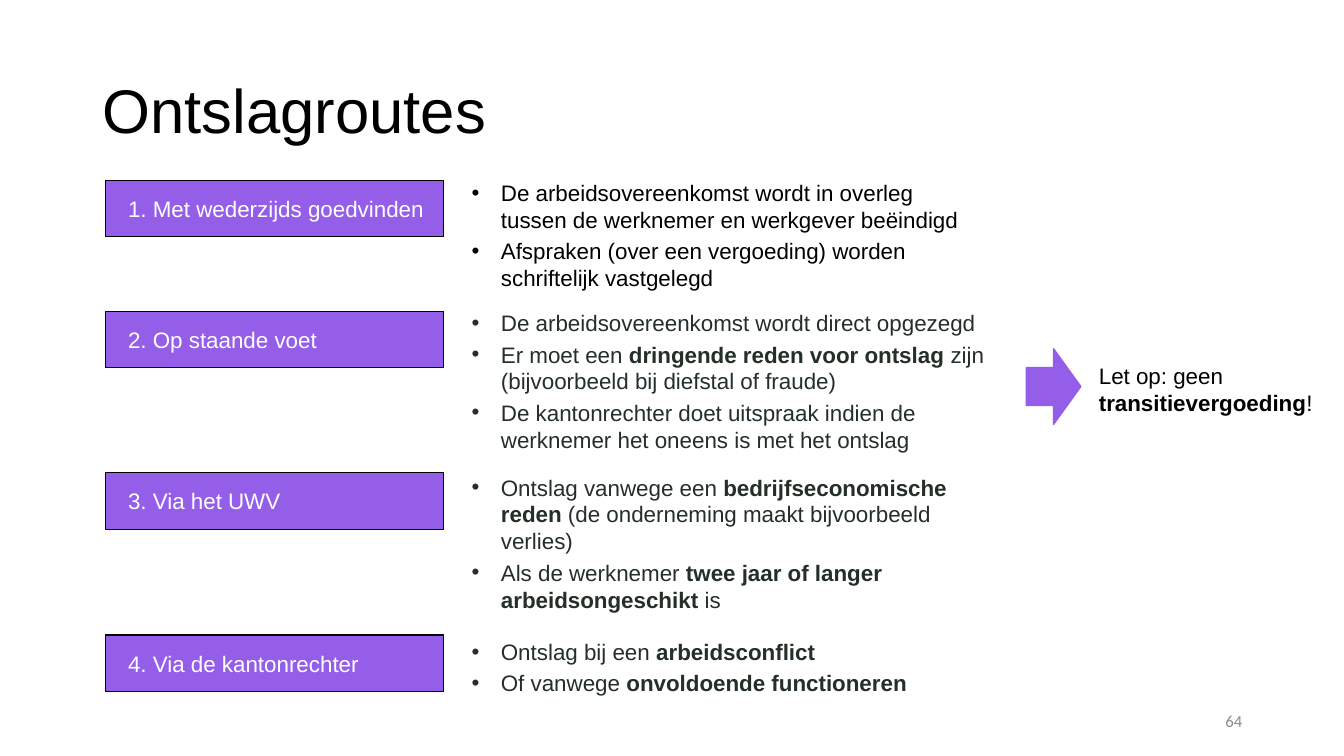
from lxml.etree import SubElement
from pptx import Presentation
from pptx.dml.color import RGBColor
from pptx.enum.shapes import MSO_SHAPE
from pptx.enum.text import MSO_ANCHOR, PP_ALIGN
from pptx.oxml.ns import qn
from pptx.util import Inches, Pt

TITLE = "Ontslagroutes"
PAGE = "64"
# Each paragraph is split at "*": every second piece is bold.
# Route: label, label top, text top, text height, text width, colour, bullets
ROUTES = [
    ("1. Met wederzijds goedvinden", 1.79, 1.73, 1.06, 5.17, "black", [
        "De arbeidsovereenkomst wordt in overleg tussen de werknemer en werkgever beëindigd",
        "Afspraken (over een vergoeding) worden schriftelijk vastgelegd"]),
    ("2. Op staande voet", 3.09, 3.02, 1.63, 5.35, "ink", [
        "De arbeidsovereenkomst wordt direct opgezegd",
        "Er moet een *dringende reden voor ontslag *zijn (bijvoorbeeld bij diefstal of fraude)",
        "De kantonrechter doet uitspraak indien de werknemer het oneens is met het ontslag"]),
    ("3. Via het UWV", 4.69, 4.65, 1.25, 5.17, "ink", [
        "Ontslag vanwege een *bedrijfseconomische reden *"
        "(de onderneming maakt bijvoorbeeld verlies)",
        "Als de werknemer *twee jaar of langer arbeidsongeschikt* is"]),
    ("4. Via de kantonrechter", 6.3, 6.28, 0.8, 5.17, "ink", [
        "Ontslag bij een *arbeidsconflict",
        "Of vanwege *onvoldoende functioneren"]),
]
NOTE = "Let op: geen *transitievergoeding*!"

THEME = {
    "purple": RGBColor.from_string("945EE8"),
    "black": RGBColor.from_string("000000"),
    "ink": RGBColor.from_string("242F27"),
    "white": RGBColor.from_string("FFFFFF"),
    "grey": RGBColor.from_string("8C8C8C"),
    "title": Pt(44), "body": Pt(16), "page": Pt(12),
}
LABEL_X, LABEL_W, LABEL_H = 1.05, 3.35, 0.56
TEXT_X = 4.58
INDENT = Inches(0.29)


def set_all(target, values):
    for name, value in values.items():
        setattr(target, name, value)


def add_bullet(p):
    pPr = p._p.get_or_add_pPr()
    pPr.set("marL", str(INDENT))
    pPr.set("indent", str(-INDENT))
    SubElement(pPr, qn("a:buFont")).set("typeface", "Arial")
    SubElement(pPr, qn("a:buChar")).set("char", "•")


def write(sp, paragraphs, size="body", color="black", font="Arial", bullets=False,
          frame=None, para=None):
    tf = sp.text_frame
    set_all(tf, {"word_wrap": True, **(frame or {})})
    for i, text in enumerate(paragraphs):
        p = tf.add_paragraph() if i else tf.paragraphs[0]
        if bullets:
            add_bullet(p)
        set_all(p, {"alignment": PP_ALIGN.LEFT, **(para or {})})
        if i:
            p.space_before = Pt(3.2)
        for j, piece in enumerate(text.split("*")):
            r = p.add_run()
            r.text = piece
            set_all(r.font, {"name": font, "size": THEME[size], "bold": j % 2 == 1})
            r.font.color.rgb = THEME[color]


def add_block(s, kind, box, line, width):
    sp = s.shapes.add_shape(kind, *map(Inches, box))
    sp.shadow.inherit = False
    sp.fill.solid()
    sp.fill.fore_color.rgb = THEME["purple"]
    sp.line.color.rgb = THEME[line]
    sp.line.width = Pt(width)
    return sp


def add_text(s, box, paragraphs, **style):
    write(s.shapes.add_textbox(*map(Inches, box)), paragraphs, **style)


def main():
    prs = Presentation()
    prs.slide_width, prs.slide_height = Inches(13.33), Inches(7.5)
    s = prs.slides.add_slide(prs.slide_layouts[6])
    middle = {"vertical_anchor": MSO_ANCHOR.MIDDLE}

    add_text(s, (9.42, 6.95, 3, 0.4), [PAGE], size="page", color="grey", font="Calibri",
             frame=middle, para={"alignment": PP_ALIGN.RIGHT})
    add_text(s, (0.92, 0.4, 11.5, 1.45), [TITLE], size="title",
             frame=middle, para={"line_spacing": 0.9})

    for label, label_y, text_y, text_h, text_w, color, bullets in ROUTES:
        sp = add_block(s, MSO_SHAPE.RECTANGLE, (LABEL_X, label_y, LABEL_W, LABEL_H),
                       "black", 0.75)
        write(sp, [label], color="white", frame={**middle, "margin_left": Inches(0.22)})
        add_text(s, (TEXT_X, text_y, text_w, text_h), bullets, color=color, bullets=True)

    add_block(s, MSO_SHAPE.RIGHT_ARROW, (10.18, 3.46, 0.54, 0.75), "purple", 1)
    add_text(s, (10.8, 3.54, 2.45, 1.06), [NOTE])
    prs.save("out.pptx")


if __name__ == "__main__":
    main()
